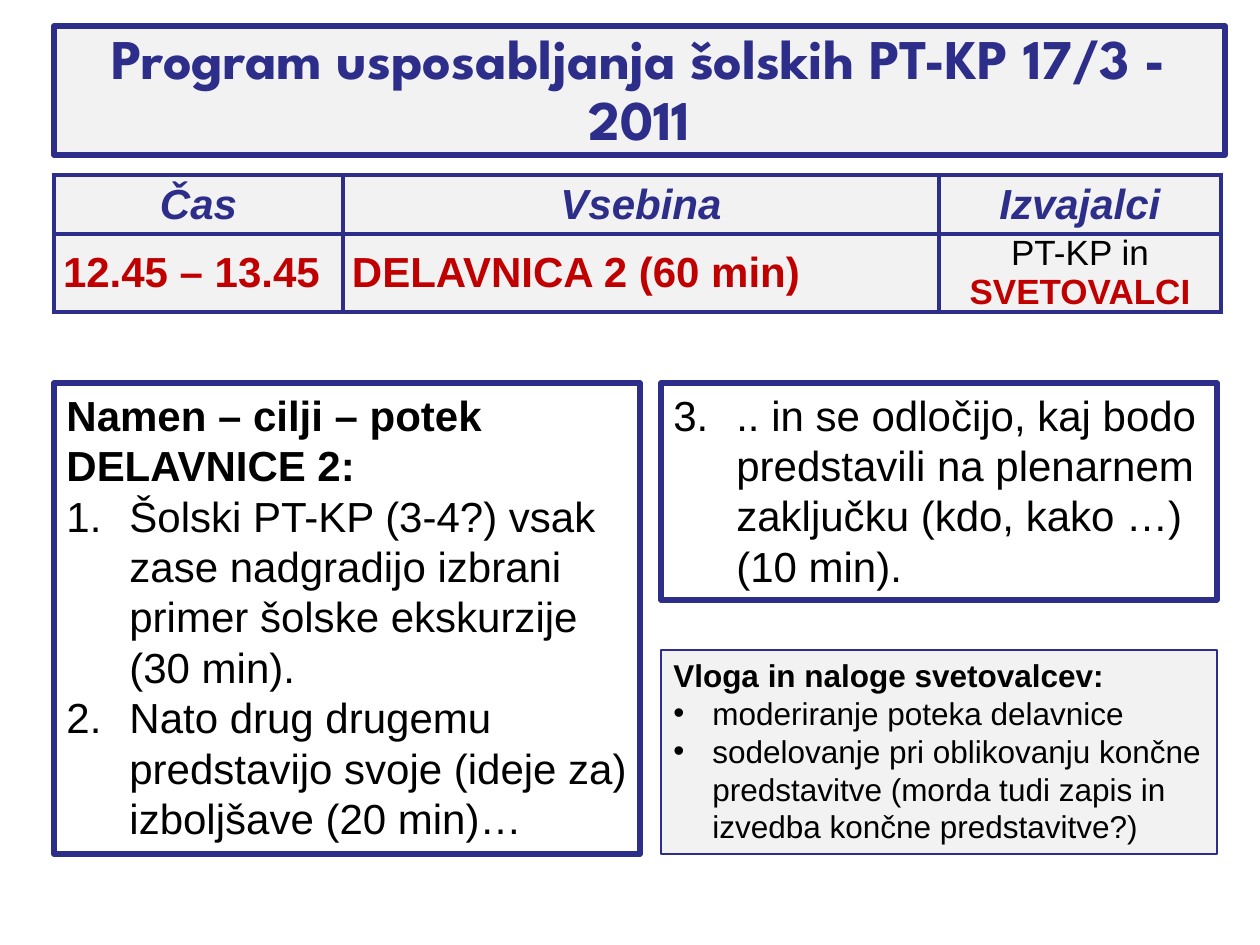
from typing import NamedTuple

from lxml.etree import SubElement
from pptx import Presentation
from pptx.dml.color import RGBColor
from pptx.enum.shapes import MSO_SHAPE as Shape
from pptx.enum.text import MSO_ANCHOR as Anchor, MSO_AUTO_SIZE as Fit, PP_ALIGN as Align
from pptx.oxml.ns import qn
from pptx.util import Pt

PX = 914400 / 126
NAVY = RGBColor(0x2D, 0x2D, 0x8A)
RED = RGBColor(0xC0, 0x00, 0x00)
BLACK = RGBColor(0x00, 0x00, 0x00)
WHITE = RGBColor(0xFF, 0xFF, 0xFF)
GRAY = RGBColor(0xF2, 0xF2, 0xF2)

LEFT, RIGHT = 54, 661
COLS = (289, 596, 282)
ROWS = (59, 68)


class Run(NamedTuple):
    text: str
    color: RGBColor
    bold: bool = True


class Cell(NamedTuple):
    runs: tuple[Run, ...]
    size: int = 24
    align: Align = Align.CENTER
    italic: bool = False


class Item(NamedTuple):
    """A paragraph; start numbers it, mark bullets it, neither makes a heading."""
    text: str
    start: int = 0
    mark: str = ""


class Box(NamedTuple):
    left: int
    top: int
    width: int
    height: int
    size: int
    indent: int
    fill: RGBColor
    line: float
    items: tuple[Item, ...]


HEADS = tuple(Cell((Run(text, NAVY),), italic=True)
              for text in ("Čas", "Vsebina", "Izvajalci"))
SLOT = (
    Cell((Run("12.45 – 13.45", RED),), align=Align.LEFT),
    Cell((Run("DELAVNICA 2 (60 min)", RED),), align=Align.LEFT),
    Cell((Run("PT-KP in ", BLACK, False), Run("SVETOVALCI", RED)), size=20),
)
BOXES = (
    Box(LEFT, 383, 586, 471, 24, 63, WHITE, 3, (
        Item("Namen – cilji – potek DELAVNICE 2:"),
        Item("Šolski PT-KP (3-4?) vsak zase nadgradijo izbrani primer "
             "šolske ekskurzije (30 min).", start=1),
        Item("Nato drug drugemu predstavijo svoje (ideje za) "
             "izboljšave (20 min)…", start=1),
    )),
    Box(RIGHT, 650, 556, 204, 18, 39, GRAY, 0.75, (
        Item("Vloga in naloge svetovalcev:"),
        Item("moderiranje poteka delavnice", mark="•"),
        Item("sodelovanje pri oblikovanju končne predstavitve "
             "(morda tudi zapis in izvedba končne predstavitve?)", mark="•"),
    )),
    Box(RIGHT, 383, 556, 217, 24, 63, WHITE, 3, (
        Item(".. in se odločijo, kaj bodo predstavili na plenarnem "
             "zaključku (kdo, kako …) (10 min).", start=3),
    )),
)


def px(*sizes: int) -> list[int]:
    return [round(size * PX) for size in sizes]


def style(font, name: str, size: int, color: RGBColor, bold: bool) -> None:
    font.name, font.size, font.bold = name, Pt(size), bold
    font.color.rgb = color


def paint(shape, fill: RGBColor, line: float) -> None:
    shape.fill.solid()
    shape.fill.fore_color.rgb = fill
    shape.line.color.rgb = NAVY
    shape.line.width = Pt(line)


def add_title(slide, text: str) -> None:
    title = slide.shapes.title
    title.left, title.top, title.width, title.height = px(LEFT, 26, 1171, 129)
    paint(title, GRAY, 3)
    frame = title.text_frame
    frame.text = text
    frame.auto_size = Fit.NONE
    frame.vertical_anchor = Anchor.MIDDLE
    para = frame.paragraphs[0]
    para.alignment = Align.CENTER
    para.line_spacing = Pt(35)
    style(para.font, "League Spartan", 32, NAVY, True)


def add_edges(cell) -> None:
    props = cell._tc.get_or_add_tcPr()
    for side in ("a:lnL", "a:lnR", "a:lnT", "a:lnB"):
        edge = SubElement(props, qn(side), w=str(Pt(3)))
        fill = SubElement(edge, qn("a:solidFill"))
        SubElement(fill, qn("a:srgbClr"), val=str(NAVY))


def fill_cell(cell, data: Cell) -> None:
    add_edges(cell)
    cell.fill.solid()
    cell.fill.fore_color.rgb = GRAY
    cell.vertical_anchor = Anchor.MIDDLE
    cell.margin_left, cell.margin_right = px(9, 9)
    cell.margin_top = cell.margin_bottom = 0
    para = cell.text_frame.paragraphs[0]
    para.alignment = data.align
    for part in data.runs:
        run = para.add_run()
        run.text = part.text
        style(run.font, "Arial", data.size, part.color, part.bold)
        run.font.italic = data.italic


def add_plan(slide, rows: tuple[tuple[Cell, ...], ...]) -> None:
    table = slide.shapes.add_table(
        len(ROWS), len(COLS), *px(LEFT, 175, sum(COLS), sum(ROWS))).table
    for col, width in zip(table.columns, px(*COLS)):
        col.width = width
    for row, height, cells in zip(table.rows, px(*ROWS), rows):
        row.height = height
        for cell, data in zip(row.cells, cells):
            fill_cell(cell, data)


def add_mark(para, item: Item, indent: int) -> None:
    """Give the paragraph a hanging indent with its number or bullet."""
    props = para._p.get_or_add_pPr()
    [hang] = px(indent)
    props.set("marL", str(hang))
    props.set("indent", str(-hang))
    SubElement(props, qn("a:buFont"), typeface="Arial")
    if item.mark:
        SubElement(props, qn("a:buChar"), char=item.mark)
    else:
        num = SubElement(props, qn("a:buAutoNum"), type="arabicPeriod")
        if item.start > 1:
            num.set("startAt", str(item.start))


def add_box(slide, box: Box) -> None:
    shape = slide.shapes.add_shape(Shape.RECTANGLE, *px(*box[:4]))
    shape.shadow.inherit = False
    paint(shape, box.fill, box.line)
    frame = shape.text_frame
    frame.word_wrap = True
    frame.auto_size = Fit.SHAPE_TO_FIT_TEXT
    frame.vertical_anchor = Anchor.TOP
    for i, item in enumerate(box.items):
        para = frame.add_paragraph() if i else frame.paragraphs[0]
        para.text = item.text
        para.alignment = Align.LEFT
        listed = bool(item.start or item.mark)
        if listed:
            add_mark(para, item, box.indent)
        style(para.font, "Arial", box.size, BLACK, not listed)


def main() -> None:
    deck = Presentation()
    deck.slide_width, deck.slide_height = px(1260, 945)
    slide = deck.slides.add_slide(deck.slide_layouts.get_by_name("Title Only"))
    add_title(slide, "Program usposabljanja šolskih PT-KP 17/3 - 2011")
    add_plan(slide, (HEADS, SLOT))
    for box in BOXES:
        add_box(slide, box)
    deck.save("out.pptx")


if __name__ == "__main__":
    main()
